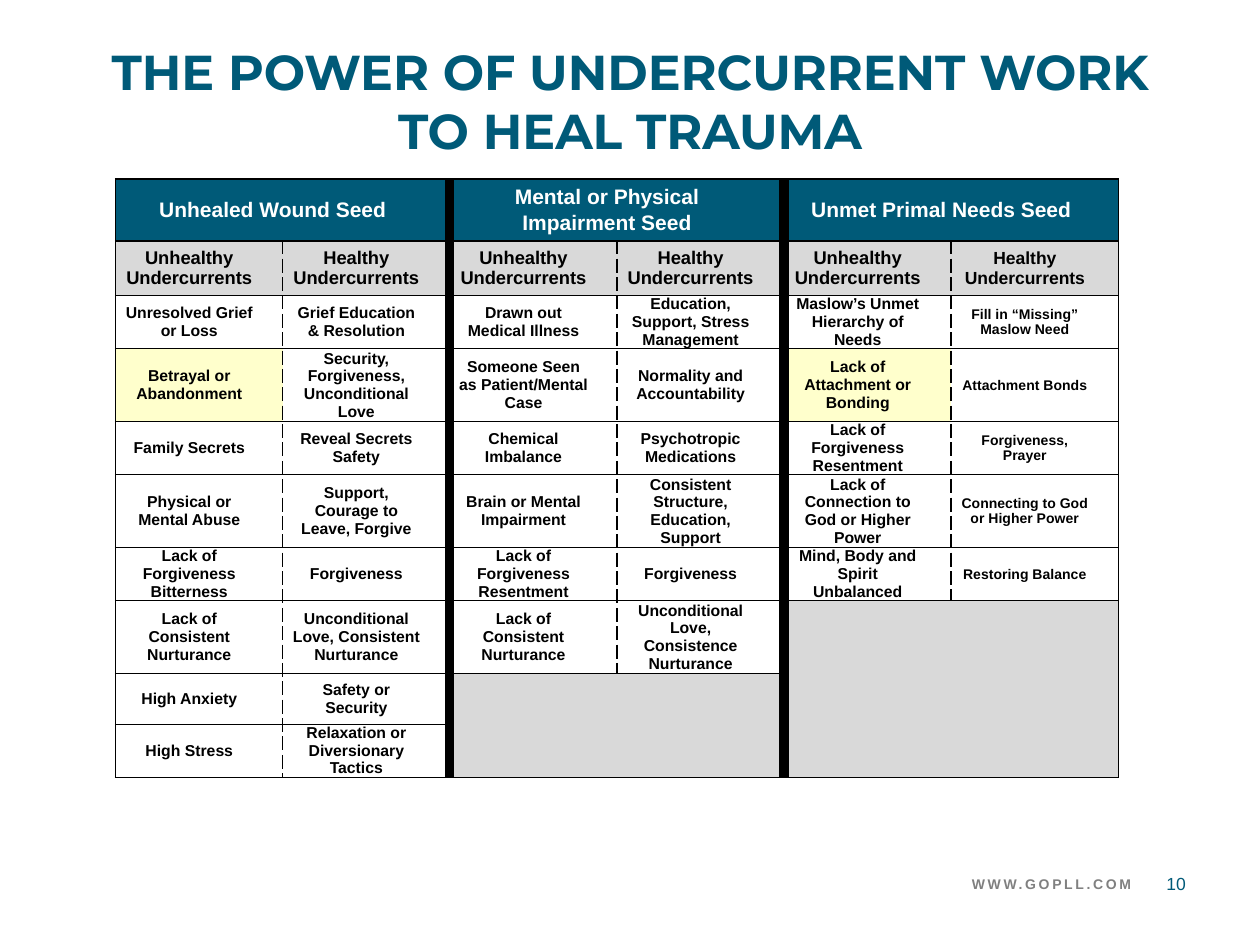
from lxml import etree
from pptx import Presentation
from pptx import util as u
from pptx.dml.color import RGBColor
from pptx.enum import text
from pptx.oxml import ns

COLORS = {"teal": "005A78", "grey": "D9D9D9", "yellow": "FFFFCC",
          "black": "000000", "white": "FFFFFF", "footer": "808080"}
THIN, THICK = 1, 6
ROW_HEIGHTS = [1.25, 1.1, 1.07, 1.47, 1.07, 1.47, 1.07, 1.47, 1.02, 1.07]
HIGHLIGHTED = {"Betrayal or Abandonment", "Lack of Attachment or Bonding"}
UNDERCURRENTS = ("Unhealthy Undercurrents", "Healthy Undercurrents")

# Each seed: title lines, (unhealthy, healthy) pairs, healthy (header, body) sizes
SEEDS = [
    (["Unhealed Wound Seed"], [
        ("Unresolved Grief or Loss", "Grief Education & Resolution"),
        ("Betrayal or Abandonment", "Security, Forgiveness, Unconditional Love"),
        ("Family Secrets", "Reveal Secrets Safety"),
        ("Physical or Mental Abuse", "Support, Courage to Leave, Forgive"),
        ("Lack of Forgiveness Bitterness", "Forgiveness"),
        ("Lack of Consistent Nurturance", "Unconditional Love, Consistent Nurturance"),
        ("High Anxiety", "Safety or Security"),
        ("High Stress", "Relaxation or Diversionary Tactics"),
    ], (10.5, 9)),
    (["Mental or Physical", "Impairment Seed"], [
        ("Drawn out Medical Illness", "Education, Support, Stress Management"),
        ("Someone Seen as Patient/Mental Case", "Normality and Accountability"),
        ("Chemical Imbalance", "Psychotropic Medications"),
        ("Brain or Mental Impairment", "Consistent Structure, Education, Support"),
        ("Lack of Forgiveness Resentment", "Forgiveness"),
        ("Lack of Consistent Nurturance", "Unconditional Love, Consistence Nurturance"),
    ], (10.5, 9)),
    (["Unmet Primal Needs Seed"], [
        ("Maslow’s Unmet Hierarchy of Needs", "Fill in “Missing” Maslow Need"),
        ("Lack of Attachment or Bonding", "Attachment Bonds"),
        ("Lack of Forgiveness Resentment", "Forgiveness, Prayer"),
        ("Lack of Connection to God or Higher Power", "Connecting to God or Higher Power"),
        ("Mind, Body and Spirit Unbalanced", "Restoring Balance"),
    ], (10, 8)),
]


def rgb(name):
    return RGBColor.from_string(COLORS[name])


def write(tf, lines, color, align=text.PP_ALIGN.CENTER, **font):
    """Fill a text frame with one paragraph per line, in one format."""
    tf.word_wrap = True
    for i, line in enumerate(lines):
        p = tf.paragraphs[0] if i == 0 else tf.add_paragraph()
        p.alignment = align
        if i:
            p.space_before = u.Pt(1.4)
        r = p.add_run()
        r.text = line
        r.font.color.rgb = rgb(color)
        for key, value in font.items():
            setattr(r.font, key, value)


def set_borders(cell, left, right):
    """Each side is a (width, dash) pair; top and bottom are thin and solid."""
    sides = {"lnL": left, "lnR": right, "lnT": (THIN, "solid"), "lnB": (THIN, "solid")}
    tc_pr = cell._tc.get_or_add_tcPr()
    for tag, (width, dash) in sides.items():
        ln = etree.SubElement(tc_pr, ns.qn(f"a:{tag}"), w=str(u.Pt(width)))
        fill = etree.SubElement(ln, ns.qn("a:solidFill"))
        etree.SubElement(fill, ns.qn("a:srgbClr"), val=COLORS["black"])
        etree.SubElement(ln, ns.qn("a:prstDash"), val=dash)


def format_cell(cell, left, right, fill=None):
    set_borders(cell, left, right)
    if fill:
        cell.fill.solid()
        cell.fill.fore_color.rgb = rgb(fill)
    else:
        cell.fill.background()


def write_cell(cell, lines, size, color="black"):
    margins = {"margin_left": 0.18, "margin_right": 0.58,
               "margin_top": 0, "margin_bottom": 0}
    for key, value in margins.items():
        setattr(cell, key, u.Cm(value))
    cell.vertical_anchor = text.MSO_ANCHOR.MIDDLE
    write(cell.text_frame, lines, color, name="Arial", size=u.Pt(size), bold=True)


def fill_seed(table, index, seed):
    """Fill the two columns of one seed: title, headers, pairs, grey remainder."""
    title, pairs, healthy_sizes = seed
    col, last_row = 2 * index, len(table.rows) - 1
    outer_left = (THICK if index else THIN, "solid")
    outer_right = (THICK if index < len(SEEDS) - 1 else THIN, "solid")
    dashed = (THIN, "dash")

    def merge(top, bottom, fill):
        for row in range(top, bottom + 1):
            for c in (col, col + 1):
                format_cell(table.cell(row, c), outer_left, outer_right, fill)
        table.cell(top, col).merge(table.cell(bottom, col + 1))

    merge(0, 0, "teal")
    write_cell(table.cell(0, col), title, 12, "white")
    for row, pair in enumerate([UNDERCURRENTS] + pairs, start=1):
        header = row == 1
        sizes = zip((10.5, 9), healthy_sizes)
        size_pair = list(sizes)[0 if header else 1]
        edges = ((outer_left, dashed), (dashed, outer_right))
        for c, (words, size, (left, right)) in enumerate(zip(pair, size_pair, edges)):
            cell = table.cell(row, col + c)
            fill = "grey" if header else "yellow" if words in HIGHLIGHTED else None
            format_cell(cell, left, right, fill)
            write_cell(cell, [words], size)
    first_empty = len(pairs) + 2
    if first_empty <= last_row:
        merge(first_empty, last_row, "grey")


def add_seed_table(s, x, y, w):
    cols = 2 * len(SEEDS)
    table = s.shapes.add_table(len(ROW_HEIGHTS), cols, u.Cm(x), u.Cm(y),
                               u.Cm(w), u.Cm(sum(ROW_HEIGHTS))).table
    table.first_row = table.horz_banding = False
    for column in table.columns:
        column.width = u.Cm(w / cols)
    for row, height in zip(table.rows, ROW_HEIGHTS):
        row.height = u.Cm(height)
    for index, seed in enumerate(SEEDS):
        fill_seed(table, index, seed)


def add_title(s, x, y, w, h):
    sp = s.shapes.title
    sp.left, sp.top, sp.width, sp.height = map(u.Cm, (x, y, w, h))
    tf = sp.text_frame
    tf.auto_size = text.MSO_AUTO_SIZE.NONE
    tf.vertical_anchor = text.MSO_ANCHOR.MIDDLE
    write(tf, ["THE POWER OF UNDERCURRENT WORK TO HEAL TRAUMA"], "teal",
          name="Montserrat", size=u.Pt(28), bold=True)


def add_footer(s, x, y, w, h):
    """Web address on the left of the box, page number at its right end."""
    number_w, gap = 1.04, 0.13
    address = s.shapes.add_textbox(u.Cm(x), u.Cm(y), u.Cm(w - number_w - gap), u.Cm(h))
    number = s.shapes.add_textbox(u.Cm(x + w - number_w), u.Cm(y), u.Cm(number_w), u.Cm(h))
    for sp in (address, number):
        sp.text_frame.vertical_anchor = text.MSO_ANCHOR.MIDDLE
    write(address.text_frame, ["WWW.GOPLL.COM"], "footer", text.PP_ALIGN.RIGHT,
          name="Arial", size=u.Pt(8), bold=True)
    address.text_frame.paragraphs[0].runs[0]._r.get_or_add_rPr().set("spc", "150")
    write(number.text_frame, ["10"], "teal", name="Arial", size=u.Pt(10))


def main():
    prs = Presentation()
    prs.slide_width, prs.slide_height = u.Cm(25.4), u.Cm(19.05)
    s = prs.slides.add_slide(prs.slide_layouts[5])
    add_title(s, 1.27, 0.43, 22.86, 3.18)
    add_seed_table(s, 2.33, 3.61, 20.22)
    add_footer(s, 7.19, 17.35, 17.04, 0.94)
    prs.save("out.pptx")


if __name__ == "__main__":
    main()
